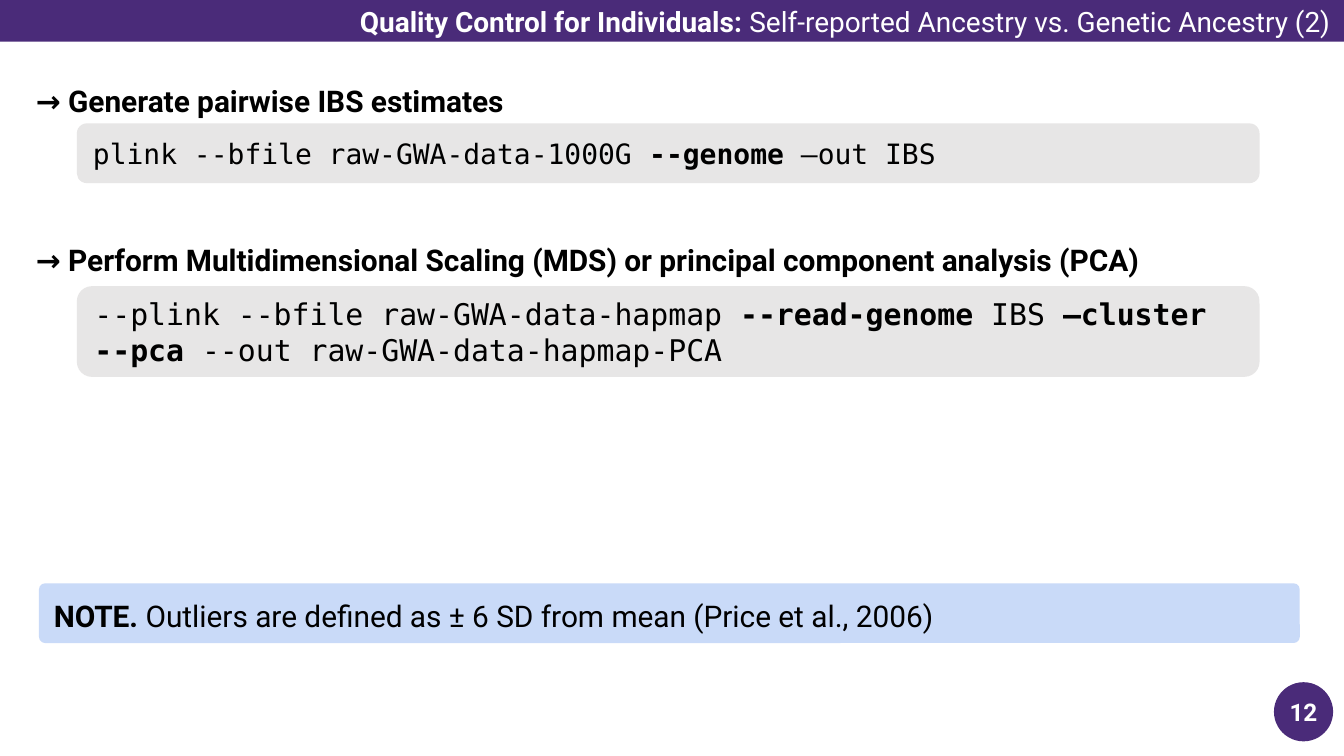
from dataclasses import dataclass
from typing import Optional

from pptx import Presentation
from pptx.dml.color import RGBColor
from pptx.enum.shapes import MSO_SHAPE as Preset
from pptx.enum.text import MSO_ANCHOR as Anchor, MSO_AUTO_SIZE as AutoSize, PP_ALIGN as Align
from pptx.util import Pt

PURPLE = RGBColor(0x4A, 0x2B, 0x79)
GREY = RGBColor(0xE7, 0xE6, 0xE6)
BLUE = RGBColor(0xC9, 0xDA, 0xF8)
BLACK = RGBColor(0, 0, 0)
WHITE = RGBColor(0xFF, 0xFF, 0xFF)
SANS, MONO = "Roboto", "DejaVu Sans Mono"
PAGE_WIDTH, PAGE_HEIGHT = 720, 405


@dataclass(frozen=True)
class Span:
    text: str
    bold: bool = False


@dataclass(frozen=True)
class Panel:
    """A text area; lengths are in points, and no preset means a text box."""
    left: float
    top: float
    width: float
    height: float
    spans: tuple[Span, ...]
    size: float = 16
    font: str = SANS
    color: RGBColor = BLACK
    fill: Optional[RGBColor] = None
    preset: Optional[Preset] = None
    rounding: Optional[float] = None
    align: Align = Align.LEFT
    line_spacing: float = 1.0
    inset_x: float = 7.2
    inset_y: float = 7.2


TITLE = Panel(0, 0, PAGE_WIDTH, 22.3,
              (Span("Quality Control for Individuals:", True),
               Span(" Self-reported Ancestry vs. Genetic Ancestry (2)")),
              size=15, color=WHITE, fill=PURPLE, align=Align.RIGHT, inset_y=3.6)


def heading(top: float, height: float, text: str) -> Panel:
    return Panel(12.2, top, 662.4, height, (Span(text, True),))


def command(top: float, height: float, size: float, *spans: Span) -> Panel:
    return Panel(41.2, top, 633.6, height, spans, size=size, font=MONO,
                 fill=GREY, preset=Preset.ROUNDED_RECTANGLE, rounding=0.167)


PANELS = (
    # Commands
    command(66.1, 32, 15, Span("plink --bfile raw-GWA-data-1000G "),
            Span("--genome", True), Span(" –out IBS")),
    command(153.3, 48.6, 16, Span("--plink --bfile raw-GWA-data-hapmap "),
            Span("--read-genome", True), Span(" IBS "),
            Span("–cluster --pca", True), Span(" --out raw-GWA-data-hapmap-PCA")),
    # Step headings
    heading(41.2, 25.2, "→ Generate pairwise IBS estimates"),
    heading(124.2, 29.5,
            "→ Perform Multidimensional Scaling (MDS) or principal component analysis (PCA)"),
    # Note
    Panel(20.9, 312.5, 675.4, 32,
          (Span("NOTE.", True),
           Span(" Outliers are defined as ± 6 SD from mean (Price et al., 2006)")),
          fill=BLUE, preset=Preset.ROUNDED_RECTANGLE, rounding=0.102, line_spacing=1.15),
    # Page number
    Panel(682.5, 365.5, 31.7, 31.7, (Span("12", True),), size=13, color=WHITE,
          fill=PURPLE, preset=Preset.OVAL, align=Align.CENTER, inset_x=0, inset_y=0),
)


def set_all(target, values: dict) -> None:
    for name, value in values.items():
        setattr(target, name, value)


def format_box(box, panel: Panel) -> None:
    """Place the box, fill it and write its spans."""
    set_all(box, {"left": Pt(panel.left), "top": Pt(panel.top),
                  "width": Pt(panel.width), "height": Pt(panel.height)})
    if panel.fill is not None:
        box.fill.solid()
        box.fill.fore_color.rgb = panel.fill
        box.line.fill.background()
    frame = box.text_frame
    set_all(frame, {"word_wrap": True, "auto_size": AutoSize.NONE,
                    "vertical_anchor": Anchor.MIDDLE,
                    "margin_left": Pt(panel.inset_x), "margin_right": Pt(panel.inset_x),
                    "margin_top": Pt(panel.inset_y), "margin_bottom": Pt(panel.inset_y)})
    para = frame.paragraphs[0]
    set_all(para, {"alignment": panel.align, "line_spacing": panel.line_spacing,
                   "space_before": Pt(0)})
    for span in panel.spans:
        run = para.add_run()
        run.text = span.text
        set_all(run.font, {"name": panel.font, "size": Pt(panel.size), "bold": span.bold})
        run.font.color.rgb = panel.color


def draw_panel(page, panel: Panel) -> None:
    bounds = [Pt(value) for value in (panel.left, panel.top, panel.width, panel.height)]
    if panel.preset is None:
        box = page.shapes.add_textbox(*bounds)
    else:
        box = page.shapes.add_shape(panel.preset, *bounds)
        box.shadow.inherit = False
    if panel.rounding is not None:
        box.adjustments[0] = panel.rounding
    format_box(box, panel)


def main() -> None:
    deck = Presentation()
    set_all(deck, {"slide_width": Pt(PAGE_WIDTH), "slide_height": Pt(PAGE_HEIGHT)})
    page = deck.slides.add_slide(deck.slide_layouts.get_by_name("Title Only"))
    format_box(page.shapes.title, TITLE)
    for panel in PANELS:
        draw_panel(page, panel)
    deck.save("out.pptx")


if __name__ == "__main__":
    main()
